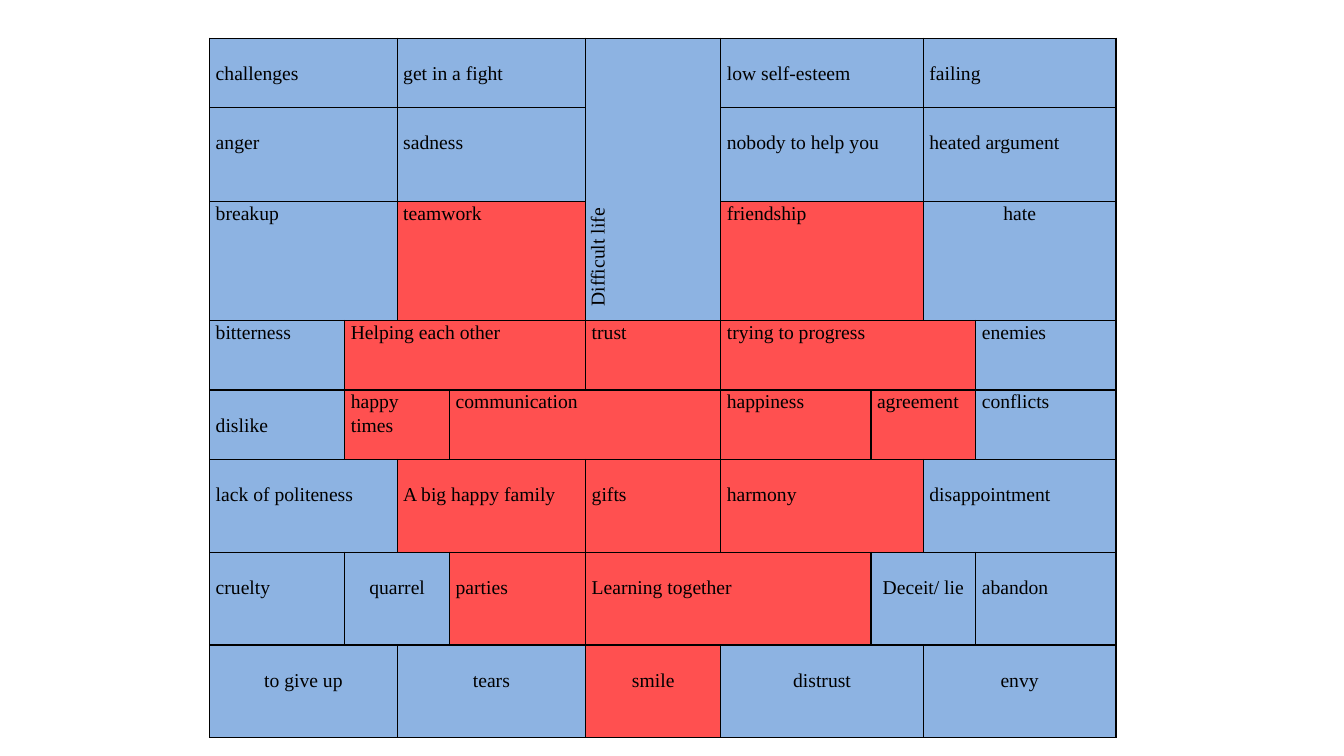
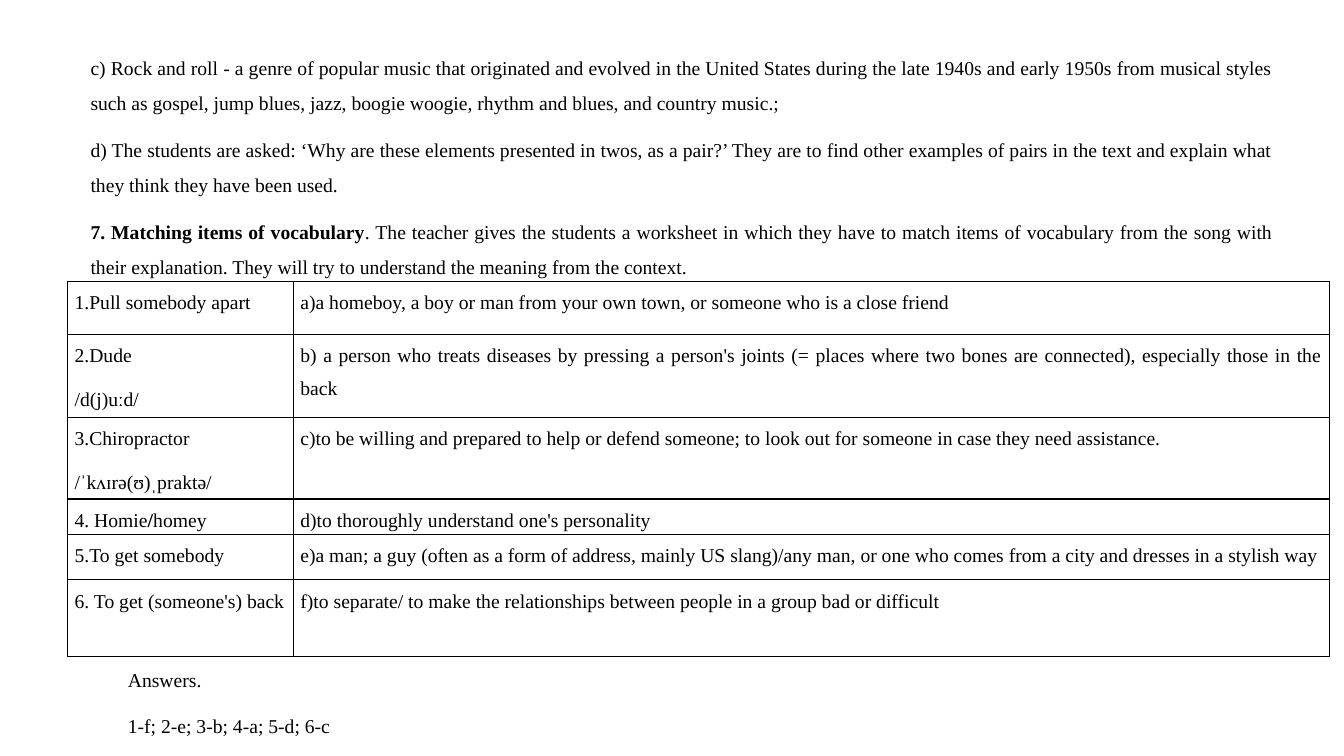
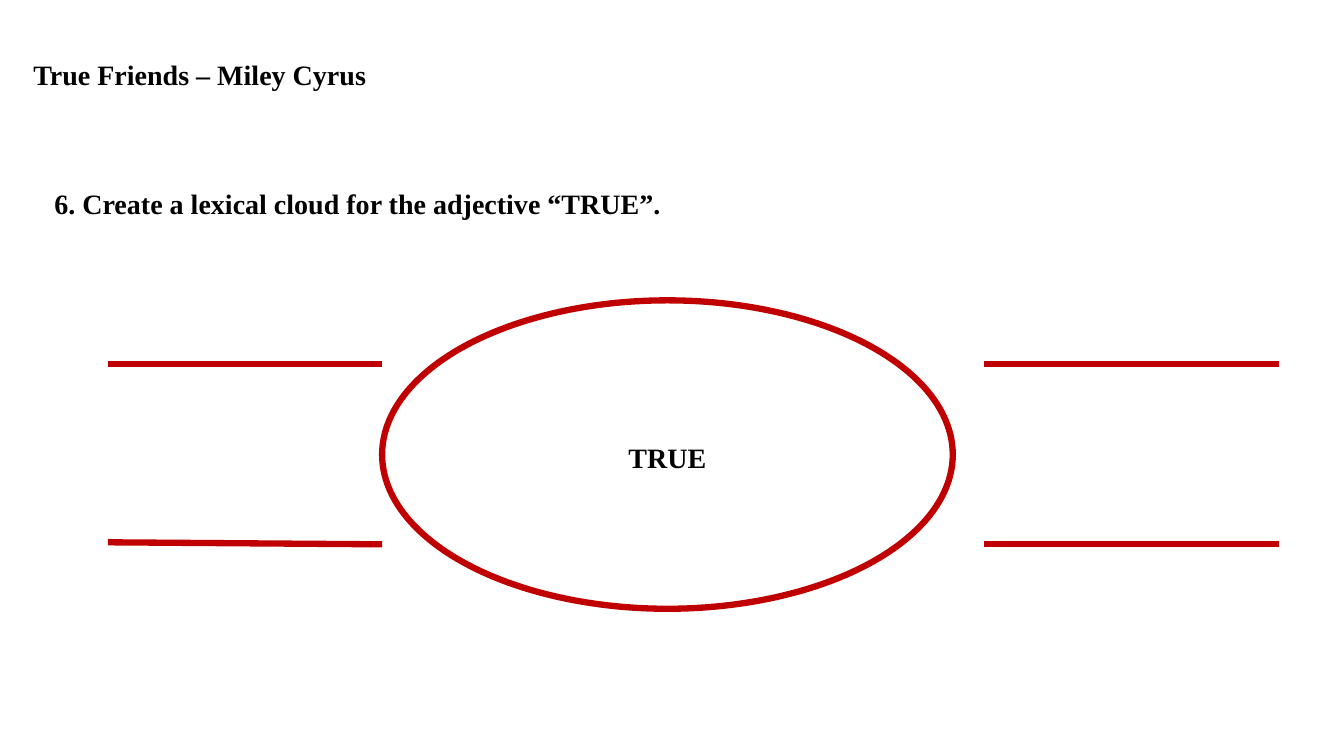
from dataclasses import dataclass
from typing import NamedTuple, Optional

from lxml.etree import SubElement
from pptx import Presentation
from pptx.dml.color import RGBColor
from pptx.enum.shapes import MSO_CONNECTOR, MSO_SHAPE
from pptx.enum.text import MSO_ANCHOR, MSO_AUTO_SIZE, PP_ALIGN
from pptx.oxml.ns import qn
from pptx.util import Inches, Pt

# Shared look
COLORS = {
    "text": "000000",
    "border": "000000",
    "negative": "8DB3E2",
    "positive": "FF5050",
    "cloud": "C00000",
    "paper": "FFFFFF",
}
FONT = "Times New Roman"
TITLE_ONLY, BLANK = 5, 6


class Run(NamedTuple):
    text: str
    bold: bool = False


@dataclass(frozen=True)
class TextStyle:
    size: int = 14
    alignment: PP_ALIGN = PP_ALIGN.LEFT
    line_spacing: float = 1.0
    space_after: int = 0
    indent: float = 0


class Box(NamedTuple):
    left: float
    top: float
    width: float
    height: float


class Word(NamedTuple):
    text: str
    columns: int = 1
    positive: bool = False
    centred: bool = False
    lowered: bool = False
    rows: int = 1


class WordRow(NamedTuple):
    height: float
    lowered: bool
    words: list[Word]


class Match(NamedTuple):
    height: float
    item: list[list[Run]]
    explanation: str


class Line(NamedTuple):
    left: float
    start_y: float
    right: float
    end_y: float


GRID_STYLE = TextStyle(line_spacing=1.07)
GRID_CENTRED = TextStyle(line_spacing=1.07, alignment=PP_ALIGN.CENTER)
GRID_VERTICAL = TextStyle(line_spacing=1.07, indent=0.08)
BODY_STYLE = TextStyle(alignment=PP_ALIGN.JUSTIFY, line_spacing=1.5, space_after=8)
ANSWER_STYLE = TextStyle(alignment=PP_ALIGN.JUSTIFY, line_spacing=1.5, space_after=8, indent=0.5)
HEADING_STYLE = TextStyle(size=20)
TITLE_STYLE = TextStyle(size=20, line_spacing=0.9)
CLOUD_STYLE = TextStyle(size=20, alignment=PP_ALIGN.CENTER, line_spacing=1.15, space_after=10)

# Slide 1: words for a difficult life around those for a happy family
GRID_COLUMNS = [1.34, 0.52, 0.52, 1.35, 1.34, 1.49, 0.52, 0.52, 1.39]
LOWERED_MARGIN = 0.23
GRID_ROWS = [
    WordRow(0.69, True, [
        Word("challenges", 2), Word("get in a fight", 2), Word("Difficult life", rows=3),
        Word("low self-esteem", 2), Word("failing", 2)]),
    WordRow(0.93, True, [
        Word("anger", 2), Word("sadness", 2),
        Word("nobody to help you", 2), Word("heated argument", 2)]),
    WordRow(1.18, False, [
        Word("breakup", 2), Word("teamwork", 2, positive=True),
        Word("friendship", 2, positive=True), Word("hate", 2, centred=True)]),
    WordRow(0.69, False, [
        Word("bitterness"), Word("Helping each other", 3, positive=True),
        Word("trust", positive=True), Word("trying to progress", 3, positive=True),
        Word("enemies")]),
    WordRow(0.69, False, [
        Word("dislike", lowered=True), Word("happy times", 2, positive=True),
        Word("communication", 2, positive=True), Word("happiness", positive=True),
        Word("agreement", 2, positive=True), Word("conflicts")]),
    WordRow(0.92, True, [
        Word("lack of politeness", 2), Word("A big happy family", 2, positive=True),
        Word("gifts", positive=True), Word("harmony", 2, positive=True),
        Word("disappointment", 2)]),
    WordRow(0.92, True, [
        Word("cruelty"), Word("quarrel", 2, centred=True), Word("parties", positive=True),
        Word("Learning together", 2, positive=True), Word("Deceit/ lie", 2, centred=True),
        Word("abandon")]),
    WordRow(0.92, True, [
        Word("to give up", 2, centred=True), Word("tears", 2, centred=True),
        Word("smile", positive=True, centred=True), Word("distrust", 2, centred=True),
        Word("envy", 2, centred=True)]),
]

# Slide 2: vocabulary matching
INSTRUCTIONS = [
    [Run("c) Rock and roll - a genre of popular music that originated and evolved in the "
         "United States during the late 1940s and early 1950s from musical styles such as "
         "gospel, jump blues, jazz, boogie woogie, rhythm and blues, and country music.;")],
    [Run("d) The students are asked: ‘Why are these elements presented in twos, as a pair?’ "
         "They are to find other examples of pairs in the text and explain what they think "
         "they have been used.")],
    [Run("7. Matching items of vocabulary", True),
     Run(". The teacher gives the students a worksheet in which they have to match items of "
         "vocabulary from the song with their explanation. They will try to understand the "
         "meaning from the context.")],
]
MATCHES = [
    Match(0.53, [[Run("1.Pull somebody apart")]],
          "a)a homeboy, a boy or man from your own town, or someone who is a close friend"),
    Match(0.82, [[Run("2.Dude")], [Run("/d(j)uːd/")]],
          "b) a person who treats diseases by pressing a person's joints (= places where two "
          "bones are connected), especially those in the back"),
    Match(0.81, [[Run("3.Chiropractor")], [Run("/ˈkʌɪrə(ʊ)ˌpraktə/")]],
          "c)to be willing and prepared to help or defend someone; to look out for someone in "
          "case they need assistance."),
    Match(0.35, [[Run("4. Homie"), Run("/", True), Run("homey")]],
          "d)to thoroughly understand one's personality"),
    Match(0.45, [[Run("5.To get somebody")]],
          "e)a man; a guy (often as a form of address, mainly US slang)/any man, or one who "
          "comes from a city and dresses in a stylish way"),
    Match(0.76, [[Run("6. To get (someone's) back")]],
          "f)to separate/ to make the relationships between people in a group bad or difficult"),
]
ANSWERS = [[Run("Answers.")], [Run("1-f; 2-e; 3-b; 4-a; 5-d; 6-c")]]

# Slide 3: lines to write on, beside the cloud
CLOUD_LINES = [
    Line(9.76, 3.61, 12.69, 3.61),
    Line(1.07, 3.61, 3.79, 3.61),
    Line(9.76, 5.4, 12.69, 5.4),
    Line(1.07, 5.38, 3.79, 5.4),
]


def color(name: str) -> RGBColor:
    return RGBColor.from_string(COLORS[name])


def write_text(frame, paragraphs: list[list[Run]], style: TextStyle) -> None:
    for index, runs in enumerate(paragraphs):
        paragraph = frame.add_paragraph() if index else frame.paragraphs[0]
        if style.indent:
            properties = paragraph._p.get_or_add_pPr()
            properties.set("marL", str(Inches(style.indent)))
            properties.set("indent", "0")
        paragraph.alignment = style.alignment
        paragraph.line_spacing = style.line_spacing
        paragraph.space_after = Pt(style.space_after)
        for text, bold in runs:
            run = paragraph.add_run()
            run.text = text
            run.font.name = FONT
            run.font.size = Pt(style.size)
            run.font.bold = bold
            run.font.color.rgb = color("text")


def add_text(slide, box: Box, paragraphs: list[list[Run]], style: TextStyle,
             wrap: bool = True) -> None:
    frame = slide.shapes.add_textbox(*map(Inches, box)).text_frame
    frame.word_wrap = wrap
    frame.auto_size = MSO_AUTO_SIZE.SHAPE_TO_FIT_TEXT
    write_text(frame, paragraphs, style)


def add_borders(cell) -> None:
    properties = cell._tc.get_or_add_tcPr()
    for side in ("lnL", "lnR", "lnT", "lnB"):
        line = SubElement(properties, qn(f"a:{side}"), w=str(Pt(1)))
        fill = SubElement(line, qn("a:solidFill"))
        SubElement(fill, qn("a:srgbClr"), val=COLORS["border"])


def add_bordered_table(slide, left: float, top: float, columns: list[float],
                       rows: list[float], side_margin: float):
    box = Box(left, top, sum(columns), sum(rows))
    table = slide.shapes.add_table(len(rows), len(columns), *map(Inches, box)).table
    table.first_row = table.horz_banding = False
    for column, width in zip(table.columns, columns):
        column.width = Inches(width)
    for row, height in zip(table.rows, rows):
        row.height = Inches(height)
    for cell in table.iter_cells():
        cell.margin_left = cell.margin_right = Inches(side_margin)
        cell.margin_top = cell.margin_bottom = 0
        add_borders(cell)
        cell.fill.background()
    return table


def fill_word(table, row: int, column: int, word: Word, lowered: bool) -> None:
    cell = table.cell(row, column)
    if word.columns > 1 or word.rows > 1:
        cell.merge(table.cell(row + word.rows - 1, column + word.columns - 1))
    cell.fill.solid()
    cell.fill.fore_color.rgb = color("positive" if word.positive else "negative")
    style = GRID_CENTRED if word.centred else GRID_STYLE
    if word.rows > 1:
        style = GRID_VERTICAL
        cell._tc.get_or_add_tcPr().set("vert", "vert270")
    elif lowered:
        cell.margin_top = Inches(LOWERED_MARGIN)
    write_text(cell.text_frame, [[Run(word.text)]], style)


def add_slide(presentation, layout: int, title: Optional[str] = None):
    slide = presentation.slides.add_slide(presentation.slide_layouts[layout])
    if title:
        shape = slide.shapes.title
        shape.left, shape.top, shape.width, shape.height = map(
            Inches, Box(0.23, 0.1, 11.76, 1.32))
        shape.text_frame.vertical_anchor = MSO_ANCHOR.MIDDLE
        write_text(shape.text_frame, [[Run(title, True)]], TITLE_STYLE)
    return slide


def build_word_grid(presentation) -> None:
    slide = add_slide(presentation, BLANK)
    heights = [row.height for row in GRID_ROWS]
    table = add_bordered_table(slide, 2.08, 0.38, GRID_COLUMNS, heights, 0.06)
    for row_index, row in enumerate(GRID_ROWS):
        column = 0
        for word in row.words:
            while table.cell(row_index, column).is_spanned:
                column += 1
            fill_word(table, row_index, column, word, row.lowered or word.lowered)
            column += word.columns


def build_matching(presentation) -> None:
    slide = add_slide(presentation, BLANK)
    add_text(slide, Box(0.8, 0.39, 11.93, 2.4), INSTRUCTIONS, BODY_STYLE)
    heights = [match.height for match in MATCHES]
    table = add_bordered_table(slide, 0.67, 2.79, [2.24, 10.28], heights, 0.07)
    for index, match in enumerate(MATCHES):
        write_text(table.cell(index, 0).text_frame, match.item, BODY_STYLE)
        write_text(table.cell(index, 1).text_frame, [[Run(match.explanation)]], BODY_STYLE)
    add_text(slide, Box(0.67, 6.46, 9.44, 0.88), ANSWERS, ANSWER_STYLE)


def add_cloud_line(slide, line: Line) -> None:
    connector = slide.shapes.add_connector(MSO_CONNECTOR.STRAIGHT, *map(Inches, line))
    connector.line.color.rgb = color("cloud")
    connector.line.width = Pt(4.5)
    SubElement(connector._element.spPr, qn("a:effectLst"))


def build_lexical_cloud(presentation) -> None:
    slide = add_slide(presentation, TITLE_ONLY, "True Friends – Miley Cyrus")
    add_text(slide, Box(0.44, 1.8, 6.26, 0.44),
             [[Run("6. Create a lexical cloud for the adjective “TRUE”.", True)]],
             HEADING_STYLE, wrap=False)
    cloud = slide.shapes.add_shape(MSO_SHAPE.OVAL, *map(Inches, Box(3.79, 2.98, 5.66, 3.06)))
    cloud.shadow.inherit = False
    cloud.fill.solid()
    cloud.fill.fore_color.rgb = color("paper")
    cloud.line.color.rgb = color("cloud")
    cloud.line.width = Pt(4.5)
    cloud.text_frame.vertical_anchor = MSO_ANCHOR.MIDDLE
    write_text(cloud.text_frame, [[Run("TRUE", True)]], CLOUD_STYLE)
    for line in CLOUD_LINES:
        add_cloud_line(slide, line)


def main() -> None:
    presentation = Presentation()
    presentation.slide_width = Inches(13.33)
    presentation.slide_height = Inches(7.5)
    build_word_grid(presentation)
    build_matching(presentation)
    build_lexical_cloud(presentation)
    presentation.save("out.pptx")


if __name__ == "__main__":
    main()
